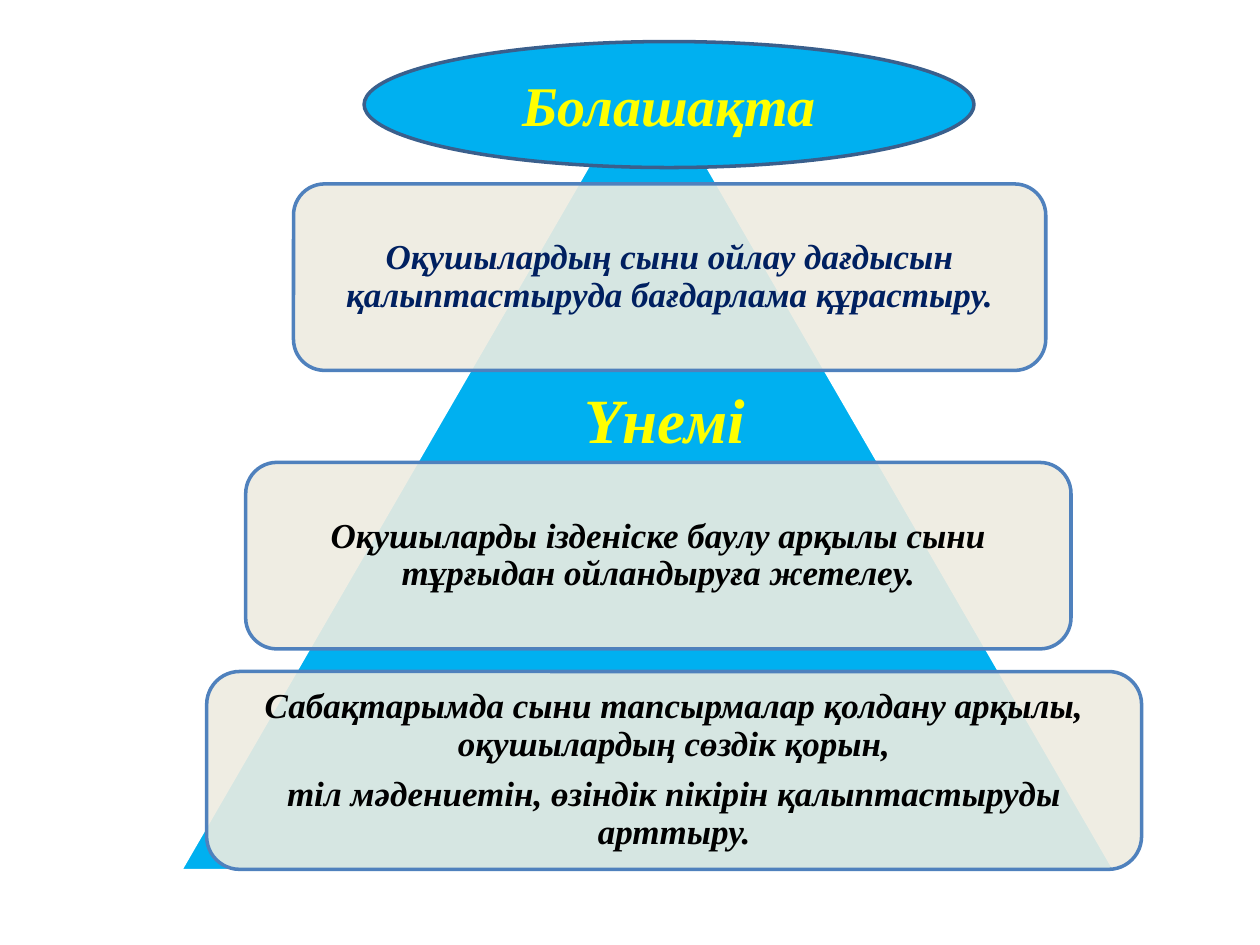
from dataclasses import dataclass

from lxml import etree
from pptx import Presentation
from pptx.dml.color import RGBColor
from pptx.enum.shapes import MSO_SHAPE
from pptx.enum.text import MSO_ANCHOR, PP_ALIGN
from pptx.oxml.ns import qn
from pptx.util import Inches, Pt

TRIANGLE = MSO_SHAPE.ISOSCELES_TRIANGLE
ROUNDED = MSO_SHAPE.ROUNDED_RECTANGLE
ELLIPSE = MSO_SHAPE.OVAL
MIDDLE = MSO_ANCHOR.MIDDLE
CENTER = PP_ALIGN.CENTER
COLUMNS, ROWS = 100, 75


@dataclass(frozen=True)
class Theme:
    font: str = "Times New Roman"
    sky: str = "00B0F0"
    cream: str = "EEECE1"
    white: str = "FFFFFF"
    border: str = "4F81BD"
    dark_border: str = "3A5F8C"
    yellow: str = "FFFF00"
    navy: str = "002060"
    black: str = "000000"
    body: int = 20
    title: int = 32
    heading: int = 36
    outline: int = 2
    card_opacity: int = 90


def write(frame, *lines, size, color, font, spacing=1.0, after=0, inset=None):
    frame.word_wrap = True
    if inset is not None:
        frame.margin_left = frame.margin_right = Inches(inset)
        frame.margin_top = frame.margin_bottom = Inches(inset)
    for index, line in enumerate(lines):
        paragraph = frame.add_paragraph() if index else frame.paragraphs[0]
        paragraph.alignment = CENTER
        paragraph.line_spacing = spacing
        paragraph.space_after = Pt(after)
        run = paragraph.add_run()
        run.text = line
        run.font.name = font
        run.font.size = Pt(size)
        run.font.bold = run.font.italic = True
        run.font.color.rgb = RGBColor.from_string(color)


class PyramidSlide:
    """Draws pyramid elements on one slide, placed by grid columns and rows."""

    def __init__(self, deck, theme):
        self.theme = theme
        self.slide = deck.slides.add_slide(deck.slide_layouts[6])
        self.column = deck.slide_width / COLUMNS
        self.row = deck.slide_height / ROWS

    def place(self, left, top, width, height):
        return (round(left * self.column), round(top * self.row),
                round(width * self.column), round(height * self.row))

    def figure(self, kind, area, fill, line, opacity=100):
        figure = self.slide.shapes.add_shape(kind, *self.place(*area))
        figure.shadow.inherit = False
        figure.fill.solid()
        figure.fill.fore_color.rgb = RGBColor.from_string(fill)
        figure.line.color.rgb = RGBColor.from_string(line)
        figure.line.width = Pt(self.theme.outline)
        if opacity < 100:
            tint = figure.element.spPr.find(qn("a:solidFill"))[0]
            etree.SubElement(tint, qn("a:alpha"), val=str(opacity * 1000))
        return figure

    def pyramid(self, *area):
        self.figure(TRIANGLE, area, self.theme.sky, self.theme.white)

    def card(self, area, *lines, color):
        theme = self.theme
        card = self.figure(ROUNDED, area, theme.cream, theme.border, theme.card_opacity)
        card.text_frame.vertical_anchor = MIDDLE
        write(card.text_frame, *lines, size=theme.body, color=color,
              font=theme.font, spacing=0.9, after=7, inset=0.08)

    def title(self, area, wording):
        theme = self.theme
        title = self.figure(ELLIPSE, area, theme.sky, theme.dark_border)
        title.text_frame.vertical_anchor = MIDDLE
        write(title.text_frame, wording, size=theme.title, color=theme.yellow,
              font=theme.font)

    def heading(self, area, wording):
        theme = self.theme
        heading = self.slide.shapes.add_textbox(*self.place(*area))
        write(heading.text_frame, wording, size=theme.heading, color=theme.yellow,
              font=theme.font)


def main():
    deck = Presentation()
    deck.slide_width, deck.slide_height = Inches(10), Inches(7.5)
    theme = Theme()
    page = PyramidSlide(deck, theme)
    page.pyramid(14.3, 5, 74.2, 64.1)
    page.card((23.3, 14.6, 59.7, 14.8),
              "Оқушылардың сыни ойлау дағдысын қалыптастыруда бағдарлама құрастыру.",
              color=theme.navy)
    page.card((19.5, 36.7, 65.5, 14.8),
              "Оқушыларды ізденіске баулу арқылы сыни тұрғыдан ойландыруға жетелеу.",
              color=theme.black)
    page.card((16.4, 53.3, 74.2, 15.7),
              "Сабақтарымда сыни тапсырмалар қолдану арқылы, оқушылардың сөздік қорын,",
              "тіл мәдениетін, өзіндік пікірін қалыптастыруды арттыру.",
              color=theme.black)
    page.title((28.9, 3.3, 48.4, 10), "Болашақта")
    page.heading((43, 29.7, 19.5, 7.1), "Үнемі")
    deck.save("out.pptx")


if __name__ == "__main__":
    main()
